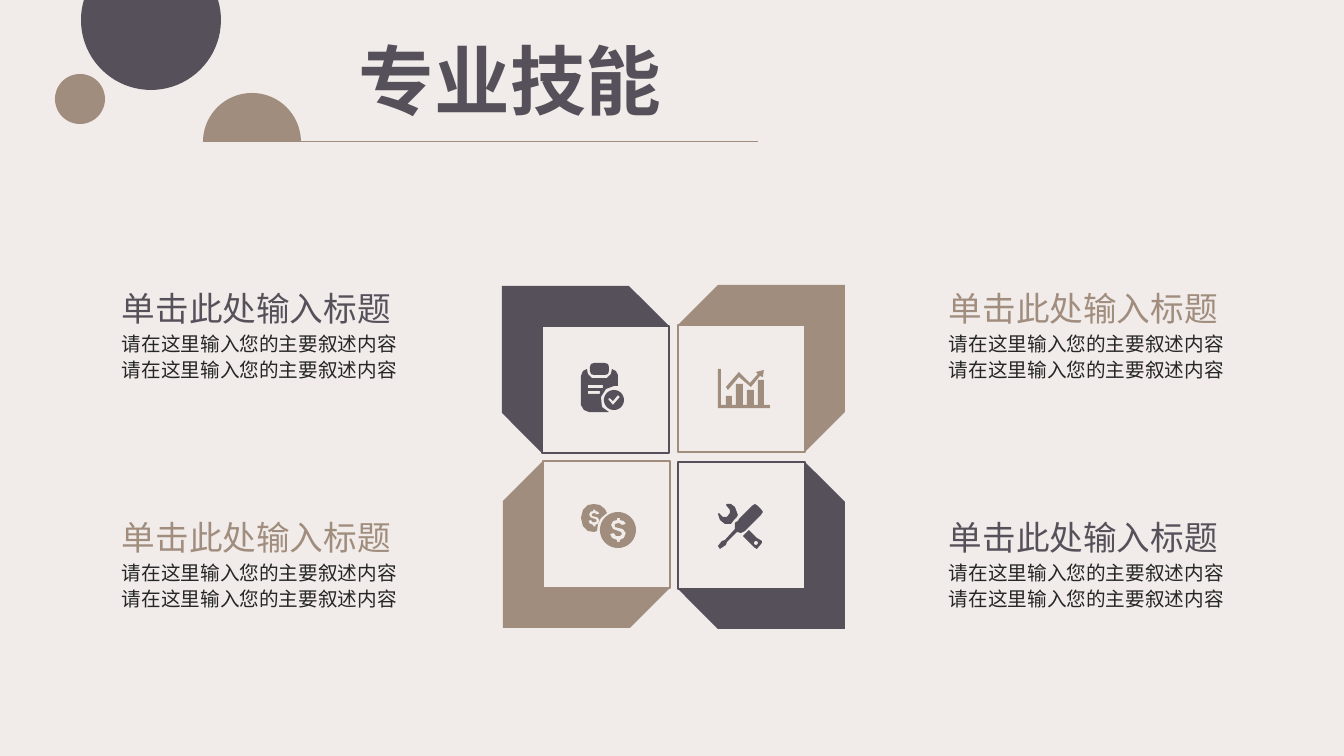
from math import asin, cos, pi, sin

from pptx import Presentation
from pptx.dml.color import RGBColor
from pptx.enum.shapes import MSO_CONNECTOR as Connector, MSO_SHAPE as Preset
from pptx.enum.text import MSO_AUTO_SIZE as AutoSize
from pptx.oxml.ns import qn
from pptx.util import Pt

PX = 12192000 / 1344
FONT = "Noto Sans CJK SC"
CREAM = RGBColor(0xF1, 0xEC, 0xE9)
PLUM = RGBColor(0x56, 0x50, 0x5A)
TAUPE = RGBColor(0xA0, 0x8D, 0x7E)
INK = RGBColor(0x26, 0x26, 0x26)


def arc(cx, cy, radius, start=0, end=2 * pi, steps=48):
    angles = [start + (end - start) * step / steps for step in range(steps + 1)]
    return [(cx + radius * cos(angle), cy + radius * sin(angle)) for angle in angles]


DOLLAR = [(-1, -12), (2, -12), (2, -10), (6, -9), (8, -6), (4, -5), (1, -7), (-3, -6),
          (-3, -3), (5, -1), (8, 3), (6, 8), (2, 10), (2, 12), (-1, 12), (-1, 10),
          (-6, 8), (-8, 4), (-4, 3), (-2, 6), (2, 6), (4, 4), (3, 2), (-5, -1),
          (-7, -5), (-5, -9), (-1, -10)]


def dollar(cx, cy, scale):
    return [(cx + x * scale, cy + y * scale) for x, y in DOLLAR]


CLIPBOARD = [
    [(9, 4), (10, 1), (13, 0), (24, 0), (27, 1), (28, 4), (28, 8), (27, 11),
     (24, 12), (13, 12), (10, 11), (9, 8)],
    [(6, 6), (7, 11), (11, 15), (26, 15), (30, 11), (31, 6), (35, 8), (37, 12),
     (37, 23), (33, 23), (25, 26), (20, 34), (21, 44), (28, 49), (8, 49), (3, 47),
     (0, 42), (0, 13), (2, 8)],
    [(7, 28), (19, 28), (19, 31), (7, 31)],
    [(7, 22), (22, 22), (22, 25), (7, 25)],
    arc(33, 37, 10),
    [(27, 36), (29, 35), (32, 38), (37, 32), (39, 34), (32, 42)],
]
CHART = [
    [(0, 0), (3, 0), (3, 36), (8, 36), (8, 27), (14, 27), (14, 36), (18, 36),
     (18, 15), (25, 15), (25, 36), (29, 36), (29, 21), (36, 21), (36, 36), (40, 36),
     (40, 11), (46, 11), (46, 36), (52, 36), (52, 39), (0, 39)],
    [(21, 8), (10, 21), (8, 18), (21, 3), (32, 14), (40, 5), (38, 3), (46, 1),
     (45, 8), (42, 7), (33, 18)],
]
COINS = [
    [(26, 9), (24, 5), (19, 1), (13, 0), (7, 1), (2, 6), (0, 14), (2, 22), (7, 27),
     (13, 28), (16, 27), (17, 20), (20, 14)],
    dollar(13, 14, 0.7),
    arc(37, 26, 18),
    dollar(37, 26, 1),
]
TOOLS = [
    [(43, 5), (40, 2), (37, 0), (34, 2), (21, 15), (20, 17), (18, 18), (17, 19),
     (17, 25), (7, 36), (4, 37), (0, 42), (2, 45), (8, 41), (9, 38), (19, 28),
     (23, 29), (27, 27), (43, 11), (45, 8)],
    [(16, 16), (18, 14), (19, 13), (20, 11), (17, 3), (13, 0), (9, 0), (8, 1),
     (12, 6), (12, 9), (9, 13), (5, 13), (1, 9), (0, 10), (2, 16), (7, 20), (13, 20)],
    [(31, 26), (39, 34), (44, 37), (44, 39), (39, 45), (37, 44), (33, 40), (25, 32)],
    arc(38, 39, 2),
]

TITLE = "专业技能"
HEADING = "单击此处输入标题"
DETAIL = "请在这里输入您的主要叙述内容"
SKILLS = [
    {"column": 0, "row": 0, "petal": (502, 286), "color": PLUM, "icon": CLIPBOARD},
    {"column": 1, "row": 0, "petal": (678, 285), "color": TAUPE, "icon": CHART},
    {"column": 0, "row": 1, "petal": (503, 461), "color": TAUPE, "icon": COINS},
    {"column": 1, "row": 1, "petal": (678, 462), "color": PLUM, "icon": TOOLS},
]
ICON_X = (581, 718)
ICON_Y = ((363, 369), (504, 504))
NOTE_X = (112, 939)
NOTE_Y = (280, 509)
PETAL_SIZE, BAND, CORNER = 167, 40, 127
PETAL = [(0, 0), (CORNER, 0), (PETAL_SIZE, BAND), (BAND, BAND),
         (BAND, PETAL_SIZE), (0, CORNER)]


def emu(px):
    return round(px * PX)


def paint(shape, color):
    shape.shadow.inherit = False
    shape.fill.solid()
    shape.fill.fore_color.rgb = color
    shape.line.fill.background()


def draw_outline(shapes, contours, color, left=0, top=0):
    placed = [[(emu(left + x), emu(top + y)) for x, y in contour] for contour in contours]
    builder = shapes.build_freeform(*placed[0][0])
    for index, contour in enumerate(placed):
        if index:
            builder.move_to(*contour[0])
        builder.add_line_segments(contour[1:], close=True)
    paint(builder.convert_to_shape(), color)


def write(shapes, box, lines, wrap):
    frame = shapes.add_textbox(*map(emu, box)).text_frame
    for name, value in {"word_wrap": wrap, "auto_size": AutoSize.SHAPE_TO_FIT_TEXT}.items():
        setattr(frame, name, value)
    for index, (words, size, pitch, color, bold) in enumerate(lines):
        paragraph = frame.add_paragraph() if index else frame.paragraphs[0]
        paragraph.line_spacing = Pt(pitch)
        run = paragraph.add_run()
        run.text = words
        for name, value in {"name": FONT, "size": Pt(size), "bold": bold}.items():
            setattr(run.font, name, value)
        run.font.color.rgb = color
        east_asian = run._r.get_or_add_rPr().makeelement(qn("a:ea"), {"typeface": FONT})
        run.font._element.find(qn("a:latin")).addnext(east_asian)


def draw_header(shapes):
    cut = asin(20 / 70)
    draw_outline(shapes, [arc(151, 20, 70, -cut, pi + cut)], PLUM)
    paint(shapes.add_shape(Preset.OVAL, *map(emu, (55, 74, 50, 50))), TAUPE)
    draw_outline(shapes, [arc(252, 142, 49, pi, 2 * pi)], TAUPE)
    rule = shapes.add_connector(Connector.STRAIGHT, *map(emu, (203, 141, 758, 141)))
    rule.line.color.rgb = TAUPE
    rule.line.width = Pt(0.5)
    effects = rule._element.spPr.makeelement(qn("a:effectLst"), {})
    rule._element.spPr.append(effects)
    write(shapes, (349, 23, 327, 102), [(TITLE, 54, 69, PLUM, True)], False)


def draw_skill(shapes, skill):
    column, row, color = skill["column"], skill["row"], skill["color"]
    left, top = skill["petal"]
    petal = [(PETAL_SIZE - x if column else x, PETAL_SIZE - y if row else y)
             for x, y in PETAL]
    draw_outline(shapes, [petal], color, left, top)
    frame_left = left + (0 if column else BAND)
    frame_top = top + (0 if row else BAND)
    frame = shapes.add_shape(
        Preset.RECTANGLE, *map(emu, (frame_left, frame_top, CORNER, CORNER)))
    frame.shadow.inherit = False
    frame.fill.background()
    frame.line.color.rgb = color
    frame.line.width = Pt(1)
    draw_outline(shapes, skill["icon"], color, ICON_X[column], ICON_Y[row][column])
    lines = [(HEADING, 24, 31, color, False)] + [(DETAIL, 14, 19, INK, False)] * 2
    write(shapes, (NOTE_X[column], NOTE_Y[row], 296, 108), lines, True)


def main():
    deck = Presentation()
    for name, value in {"slide_width": emu(1344), "slide_height": emu(756)}.items():
        setattr(deck, name, value)
    slide = deck.slides.add_slide(deck.slide_layouts[6])
    slide.background.fill.solid()
    slide.background.fill.fore_color.rgb = CREAM
    draw_header(slide.shapes)
    for skill in SKILLS:
        draw_skill(slide.shapes, skill)
    deck.save("out.pptx")


if __name__ == "__main__":
    main()
